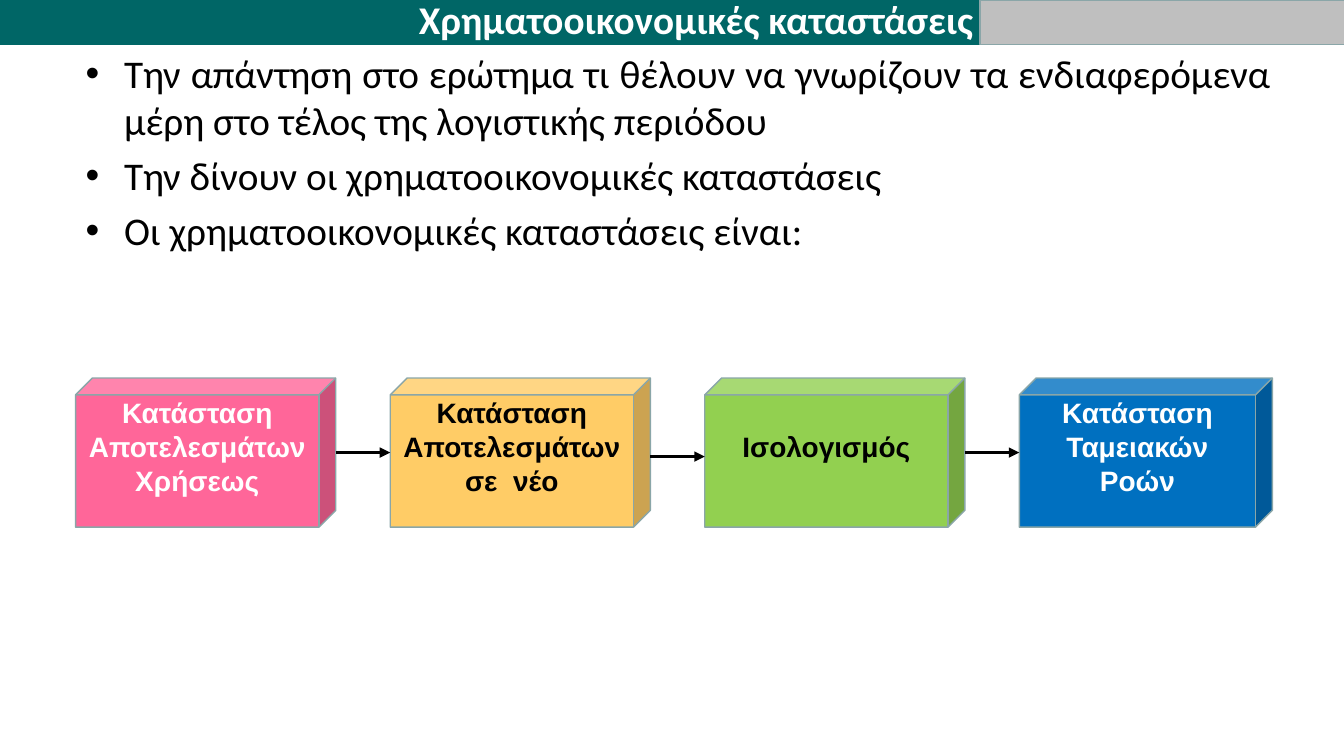
from lxml import etree
from pptx import Presentation
from pptx.dml.color import RGBColor
from pptx.enum.shapes import MSO_CONNECTOR, MSO_SHAPE
from pptx.enum.text import MSO_ANCHOR, MSO_AUTO_SIZE, PP_ALIGN
from pptx.oxml.ns import qn
from pptx.util import Inches, Pt

STRAIGHT = MSO_CONNECTOR.STRAIGHT
RECT, CUBE = MSO_SHAPE.RECTANGLE, MSO_SHAPE.CUBE
MIDDLE, TOP = MSO_ANCHOR.MIDDLE, MSO_ANCHOR.TOP
NO_FIT = MSO_AUTO_SIZE.NONE
CENTER, RIGHT, JUSTIFY = PP_ALIGN.CENTER, PP_ALIGN.RIGHT, PP_ALIGN.JUSTIFY

COLORS = {
    "black": "000000", "white": "FFFFFF", "teal": "006666", "gray": "BFBFBF",
    "edge": "8AA6A8", "pink": "FF6699", "yellow": "FFCC66",
    "green": "92D050", "blue": "0070C0",
}
BODY = {"name": "Calibri", "size": Pt(28), "bold": False}
TITLE = {"name": "Calibri", "size": Pt(28), "bold": True}
LABEL = {"name": "Arial", "size": Pt(20), "bold": True}

BULLETS = [
    "Την απάντηση στο ερώτημα τι θέλουν να γνωρίζουν τα ενδιαφερόμενα "
    "μέρη στο τέλος της λογιστικής περιόδου",
    "Την δίνουν οι χρηματοοικονομικές καταστάσεις",
    "Οι χρηματοοικονομικές καταστάσεις είναι:",
]
STATEMENTS = [
    ("Κατάσταση Αποτελεσμάτων Χρήσεως", "pink", "white", 2.58),
    ("Κατάσταση Αποτελεσμάτων σε  νέο", "yellow", "black", 2.58),
    ("Ισολογισμός", "green", "black", 2.58),
    ("Κατάσταση Ταμειακών Ροών", "blue", "white", 2.51),
]
LEFT, STEP, CUBE_TOP, CUBE_H = 0.75, 3.12, 3.75, 1.48
ARROW_YS = [4.49, 4.53, 4.49]
BAR_W, BAR_H = 9.72, 0.44


def rgb(name):
    return RGBColor.from_string(COLORS[name])


def set_attrs(obj, values):
    for key, value in values.items():
        setattr(obj, key, value)


def place(sp, x, y, w, h):
    set_attrs(sp, {"left": Inches(x), "top": Inches(y),
                   "width": Inches(w), "height": Inches(h)})


def paint(sp, fill, line, width):
    sp.fill.solid()
    sp.fill.fore_color.rgb = rgb(fill)
    sp.line.color.rgb = rgb(line)
    sp.line.width = Pt(width)


def set_frame(sp, anchor, x, top, bottom):
    set_attrs(sp.text_frame, {
        "word_wrap": True, "auto_size": NO_FIT, "vertical_anchor": anchor,
        "margin_left": Inches(x), "margin_right": Inches(x),
        "margin_top": Inches(top), "margin_bottom": Inches(bottom)})


def write(p, text, font, color, align):
    r = p.add_run()
    r.text = text
    set_attrs(r.font, font)
    r.font.color.rgb = rgb(color)
    p.alignment = align


def add_bullet(p):
    pPr = p._p.get_or_add_pPr()
    pPr.set("marL", str(Inches(0.38)))
    pPr.set("indent", str(Inches(-0.38)))
    etree.SubElement(pPr, qn("a:buFont")).set("typeface", "Arial")
    etree.SubElement(pPr, qn("a:buChar")).set("char", "•")


def fill_title(sp, text):
    place(sp, 0, 0, BAR_W, BAR_H)
    paint(sp, "teal", "teal", 0.75)
    set_frame(sp, MIDDLE, 0.07, 0.04, 0.04)
    p = sp.text_frame.paragraphs[0]
    write(p, text, TITLE, "white", RIGHT)
    p.line_spacing = 0.9


def fill_body(sp, items):
    place(sp, LEFT, BAR_H, 11.95, 7.06)
    set_frame(sp, TOP, 0.1, 0.05, 0.05)
    tf = sp.text_frame
    for i, text in enumerate(items):
        p = tf.add_paragraph() if i else tf.paragraphs[0]
        add_bullet(p)
        write(p, text, BODY, "black", JUSTIFY)
        p.space_before = Pt(5.6 if i else 0)


def add_block(s, kind, x, y, w, h, fill):
    sp = s.shapes.add_shape(kind, Inches(x), Inches(y), Inches(w), Inches(h))
    sp.shadow.inherit = False
    paint(sp, fill, "edge", 1)
    return sp


def add_cube(s, x, w, text, fill, color):
    sp = add_block(s, CUBE, x, CUBE_TOP, w, CUBE_H, fill)
    sp.adjustments[0] = 0.113
    set_frame(sp, MIDDLE, 0.1, 0.05, 0.34)
    write(sp.text_frame.paragraphs[0], text, LABEL, color, CENTER)


def add_arrow(s, x1, x2, y):
    line = s.shapes.add_connector(STRAIGHT, Inches(x1), Inches(y), Inches(x2), Inches(y))
    line.line.color.rgb = rgb("black")
    line.line.width = Pt(2.5)
    ln = line.line._get_or_add_ln()
    etree.SubElement(ln, qn("a:tailEnd")).set("type", "triangle")
    etree.SubElement(line._element.spPr, qn("a:effectLst"))


def main():
    prs = Presentation()
    prs.slide_width, prs.slide_height = Inches(13.33), Inches(7.5)
    s = prs.slides.add_slide(prs.slide_layouts[1])
    fill_title(s.shapes.title, "Χρηματοοικονομικές καταστάσεις")
    fill_body(s.placeholders[1], BULLETS)
    add_block(s, RECT, BAR_W, 0, 3.62, BAR_H, "gray")
    for i, (text, fill, color, w) in enumerate(STATEMENTS):
        add_cube(s, LEFT + i * STEP, w, text, fill, color)
    for i, y in enumerate(ARROW_YS):
        x = LEFT + i * STEP
        add_arrow(s, x + STATEMENTS[i][3], x + STEP, y)
    prs.save("out.pptx")


if __name__ == "__main__":
    main()
